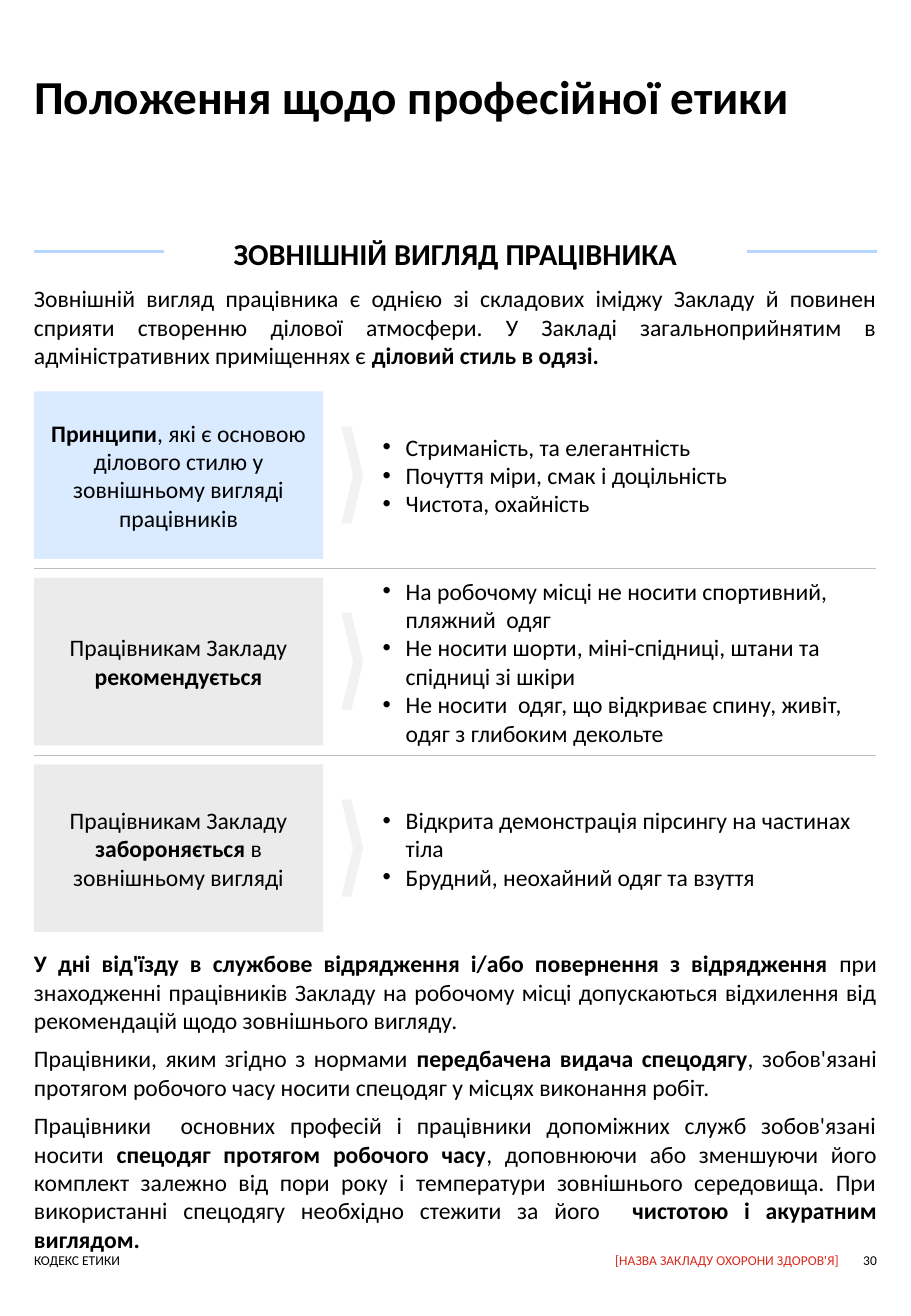
from lxml import etree
from pptx import Presentation
from pptx.dml.color import RGBColor
from pptx.enum.shapes import MSO_CONNECTOR, MSO_SHAPE
from pptx.enum.text import MSO_ANCHOR, MSO_AUTO_SIZE, PP_ALIGN
from pptx.oxml.ns import qn
from pptx.util import Pt

LEFT, MID, RIGHT, JUST = PP_ALIGN.LEFT, PP_ALIGN.CENTER, PP_ALIGN.RIGHT, PP_ALIGN.JUSTIFY
TOP, CENTER = MSO_ANCHOR.TOP, MSO_ANCHOR.MIDDLE
RECT, ARROW = MSO_SHAPE.RECTANGLE, MSO_SHAPE.CHEVRON
SCALE = 9144  # EMU per px, 100 px to the inch

# Content: *asterisks* enclose bold words
TITLE = "*Положення щодо професійної етики*"
HEAD = "*ЗОВНІШНІЙ ВИГЛЯД ПРАЦІВНИКА*"
INTRO = ["Зовнішній вигляд працівника є однією зі складових іміджу Закладу й повинен "
         "сприяти створенню ділової атмосфери. У Закладі загальноприйнятим в "
         "адміністративних приміщеннях є *діловий стиль в одязі.*"]
ROWS = [
    ("*Принципи*, які є основою ділового стилю у зовнішньому вигляді працівників", "B7D6FF",
     ["Стриманість, та елегантність",
      "Почуття міри, смак і доцільність",
      "Чистота, охайність"]),
    ("Працівникам Закладу *рекомендується*", "D9D9D9",
     ["На робочому місці не носити спортивний, пляжний  одяг",
      "Не носити шорти, міні-спідниці, штани та спідниці зі шкіри",
      "Не носити  одяг, що відкриває спину, живіт, одяг з глибоким декольте"]),
    ("Працівникам Закладу *забороняється *в зовнішньому вигляді", "D9D9D9",
     ["Відкрита демонстрація пірсингу на частинах тіла",
      "Брудний, неохайний одяг та взуття"]),
]
CLOSING = [
    "*У дні від'їзду в службове відрядження і/або повернення з відрядження *при "
    "знаходженні працівників Закладу на робочому місці допускаються відхилення від "
    "рекомендацій щодо зовнішнього вигляду.",
    "Працівники, яким згідно з нормами *передбачена видача спецодягу*, зобов'язані "
    "протягом робочого часу носити спецодяг у місцях виконання робіт.",
    "Працівники  основних професій і працівники допоміжних служб зобов'язані носити "
    "*спецодяг протягом робочого часу*, доповнюючи або зменшуючи його комплект залежно "
    "від пори року і температури зовнішнього середовища. При використанні спецодягу "
    "необхідно стежити за його  *чистотою і акуратним виглядом.*",
]
FOOTER = [  # text, left, width, alignment, colour
    ("КОДЕКС ЕТИКИ", 28, 395, LEFT, "000000"),
    ("[НАЗВА ЗАКЛАДУ ОХОРОНИ ЗДОРОВ'Я]", 390, 301, RIGHT, "DA291C"),
    ("30", 703, 19, RIGHT, "000000"),
]

# Layout in px
EDGE, WIDE = 28, 694
ROW_TOP, ROW_STEP, ROW_HIGH = 322, 153.5, 138


def px(*nums):
    return [round(n * SCALE) for n in nums]


def rgb(code):
    return RGBColor.from_string(code)


def place(shape, box):
    shape.left, shape.top, shape.width, shape.height = px(*box)


def write(shape, lines, size=14, align=LEFT, anchor=TOP, color="000000",
          inset=0, after=0, bullet=False):
    frame = shape.text_frame
    frame.word_wrap = True
    frame.auto_size = MSO_AUTO_SIZE.NONE
    frame.vertical_anchor = anchor
    frame.margin_left, frame.margin_top, frame.margin_right, frame.margin_bottom = px(*[inset] * 4)
    for i, line in enumerate(lines):
        para = frame.add_paragraph() if i else frame.paragraphs[0]
        para.alignment = align
        para.space_before, para.space_after = Pt(0), Pt(after)
        if bullet:
            props = para._p.get_or_add_pPr()
            hang = px(19)[0]
            props.set("marL", str(hang))
            props.set("indent", str(-hang))
            etree.SubElement(props, qn("a:buFont"), typeface="Arial")
            etree.SubElement(props, qn("a:buChar"), char="•")
        font = para.font
        font.name, font.size = "Calibri", Pt(size)
        font.color.rgb = rgb(color)
        for k, part in enumerate(line.split("*")):
            if part:
                run = para.add_run()
                run.text = part
                run.font.bold = k % 2 == 1


def add_text(box, lines, **style):
    shape = shapes.add_textbox(*px(*box))
    write(shape, lines, **style)


def add_block(kind, box, fill, alpha=None):
    shape = shapes.add_shape(kind, *px(*box))
    shape.shadow.inherit = False
    shape.line.fill.background()
    shape.fill.solid()
    shape.fill.fore_color.rgb = rgb(fill)
    if alpha:
        tone = shape._element.spPr.find(".//" + qn("a:srgbClr"))
        etree.SubElement(tone, qn("a:alpha"), val=str(alpha * 1000))
    return shape


def add_rule(y, width, color, weight):
    line = shapes.add_connector(MSO_CONNECTOR.STRAIGHT, *px(EDGE, y, EDGE + width, y))
    line.line.color.rgb = rgb(color)
    line.line.width = Pt(weight)
    etree.SubElement(line._element.spPr, qn("a:effectLst"))


deck = Presentation()
deck.slide_width, deck.slide_height = px(750, 1083)
slide = deck.slides.add_slide(deck.slide_layouts[4])
shapes = slide.shapes
title, *bodies, spare = slide.placeholders
spare._element.getparent().remove(spare._element)

# Title, heading and intro
place(title, (EDGE, 55, WIDE, 53))
write(title, [TITLE], size=28)
add_rule(207, WIDE, "B7D6FF", 2.25)
band = add_block(RECT, (135, 185, 480, 47), "FFFFFF")
write(band, [HEAD], size=18, align=MID, anchor=CENTER)
add_text((EDGE, 234, WIDE, 82), INTRO, align=JUST, after=6)

# Rows: label, chevron, list, with rules between
for i, ((label, fill, points), body) in enumerate(zip(ROWS, bodies)):
    top = ROW_TOP + i * ROW_STEP
    card = add_block(RECT, (EDGE, top, 238, ROW_HIGH), fill, 50)
    write(card, [label], align=MID, anchor=CENTER, inset=4, after=6)
    arrow = add_block(ARROW, (281, top + 29, 18, 80), "F2F2F2")
    arrow.adjustments[0] = 0.54
    place(body, (315, top, 407, ROW_HIGH))
    write(body, points, anchor=CENTER, bullet=True)
    if i:
        add_rule(top - 7.5, 693, "BFBFBF", 0.75)

# Closing text and footer
add_text((EDGE, 781, WIDE, 221), CLOSING, align=JUST, after=6)
for text, left, width, align, color in FOOTER:
    add_text((left, 1030, width, 14), [text], size=8, align=align, color=color)

deck.save("out.pptx")
